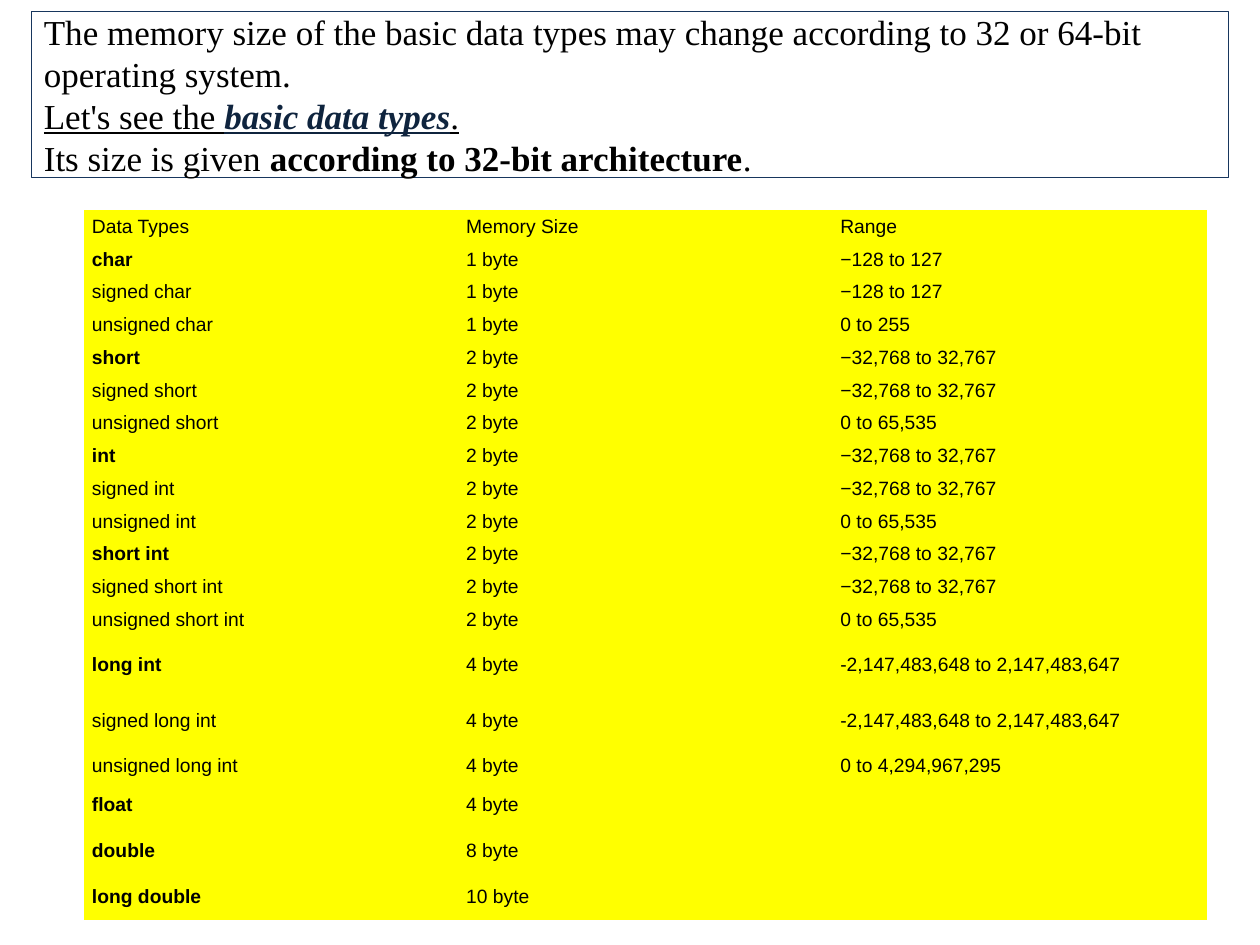
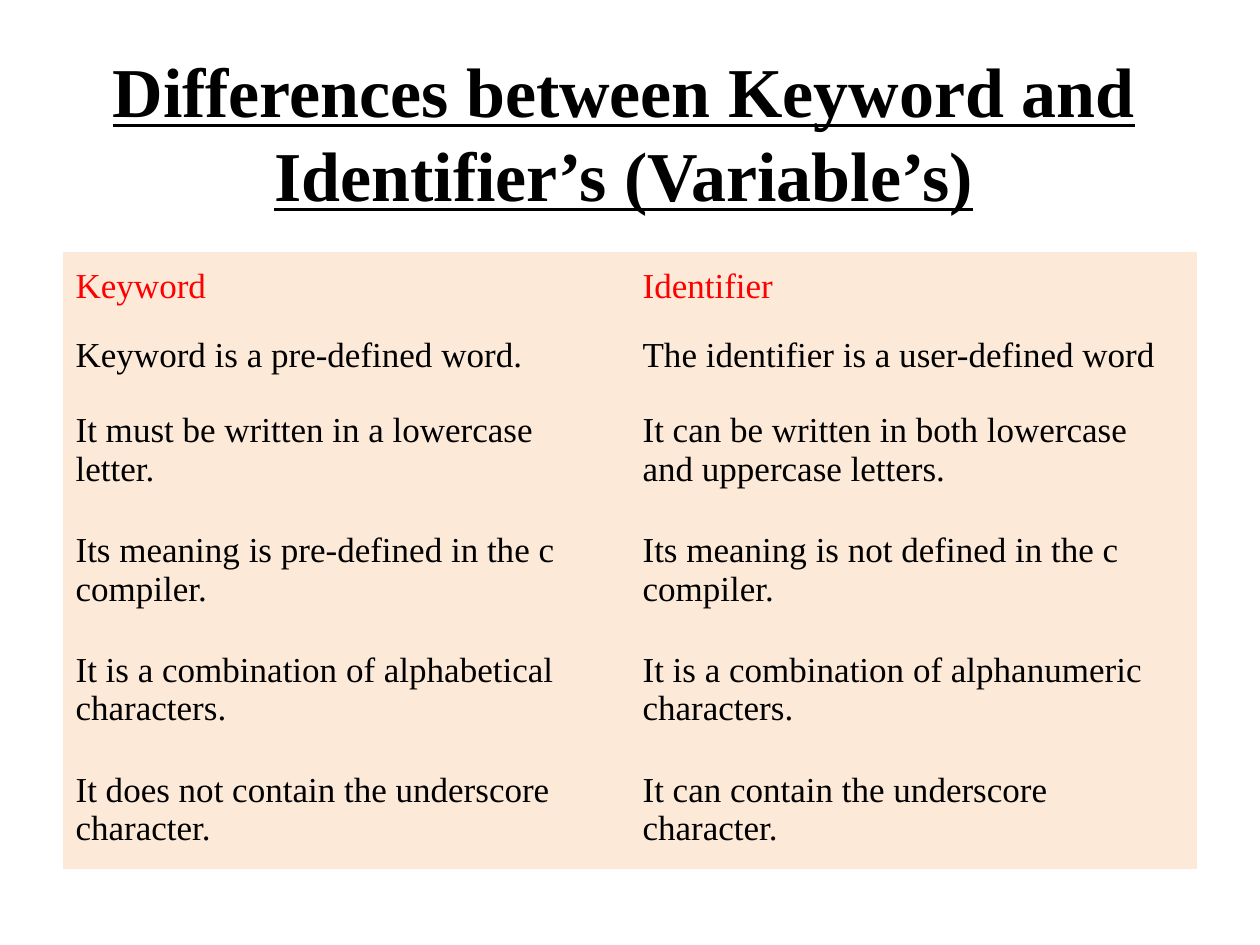
from pptx import Presentation
from pptx.dml.color import RGBColor
from pptx.enum.shapes import MSO_SHAPE as Shape
from pptx.enum.text import MSO_ANCHOR as Anchor, MSO_AUTO_SIZE as AutoSize, PP_ALIGN as Align
from pptx.util import Inches, Pt

SERIF, SANS = "Times New Roman", "Arial"
BLACK, RED, NAVY, FRAME = "000000", "FF0000", "0F243E", "17365D"
YELLOW, PEACH = "FFFF00", "FDE9D8"
PLAIN_TABLE = "{2D5ABB26-0587-4C30-8999-92F81FD0307C}"
WIDTH, HEIGHT = 10, 7.5
TITLE_ONLY, BLANK = 5, 6

INTRO = [
    [("The memory size of the basic data types may change according to "
      "32 or 64-bit operating system.", {})],
    [("Let's see the ", {"underline": True}),
     ("basic data types", {"underline": True, "bold": True, "italic": True, "color": NAVY}),
     (".", {"underline": True})],
    [("Its size is given ", {}),
     ("according to 32-bit architecture", {"bold": True}),
     (".", {})],
]

SIGNED_16, UNSIGNED_16 = "−32,768 to 32,767", "0 to 65,535"
SIGNED_32 = "-2,147,483,648 to 2,147,483,647"
FAMILIES = [
    ("char", "1 byte", "−128 to 127", "0 to 255"),
    ("short", "2 byte", SIGNED_16, UNSIGNED_16),
    ("int", "2 byte", SIGNED_16, UNSIGNED_16),
    ("short int", "2 byte", SIGNED_16, UNSIGNED_16),
    ("long int", "4 byte", SIGNED_32, "0 to 4,294,967,295"),
]
REAL_TYPES = [("float", "4 byte", ""), ("double", "8 byte", ""), ("long double", "10 byte", "")]

DIFFERENCES = [
    ("Keyword", "Identifier"),
    ("Keyword is a pre-defined word.", "The identifier is a user-defined word"),
    ("It must be written in a lowercase letter.",
     "It can be written in both lowercase and uppercase letters."),
    ("Its meaning is pre-defined in the c compiler.",
     "Its meaning is not defined in the c compiler."),
    ("It is a combination of alphabetical characters.",
     "It is a combination of alphanumeric characters."),
    ("It does not contain the underscore character.",
     "It can contain the underscore character."),
]


def rgb(value):
    return RGBColor.from_string(value)


def share(left, top, width, height):
    return (Inches(left * WIDTH), Inches(top * HEIGHT),
            Inches(width * WIDTH), Inches(height * HEIGHT))


def add_run(paragraph, text, font, size, color=BLACK, **styles):
    run = paragraph.add_run()
    run.text = text
    run.font.name, run.font.size = font, Pt(size)
    run.font.color.rgb = rgb(color)
    for style, value in styles.items():
        setattr(run.font, style, value)


def add_grid(slide, box, entries, row_heights, fill, font, size, margins, style_of, leading=None):
    grid = slide.shapes.add_table(len(entries), len(entries[0]), *box).table
    grid._tbl.tblPr[0].text = PLAIN_TABLE
    grid.first_row = grid.horz_banding = False
    side, edge = map(Inches, margins)
    for r, (entry, height) in enumerate(zip(entries, row_heights)):
        grid.rows[r].height = Inches(height)
        for c, text in enumerate(entry):
            cell = grid.cell(r, c)
            cell.fill.solid()
            cell.fill.fore_color.rgb = rgb(fill)
            cell.vertical_anchor = Anchor.MIDDLE
            cell.margin_left = cell.margin_right = side
            cell.margin_top = cell.margin_bottom = edge
            paragraph = cell.text_frame.paragraphs[0]
            paragraph.line_spacing = leading
            if text:
                add_run(paragraph, text, font, size, **style_of(r, c, text))


def add_intro(slide, box):
    intro = slide.shapes.add_shape(Shape.RECTANGLE, *box)
    intro.shadow.inherit = False
    intro.fill.background()
    intro.line.color.rgb = rgb(FRAME)
    intro.line.width = Pt(0.75)
    frame = intro.text_frame
    frame.word_wrap = True
    frame.vertical_anchor = Anchor.MIDDLE
    for i, parts in enumerate(INTRO):
        paragraph = frame.add_paragraph() if i else frame.paragraphs[0]
        paragraph.alignment = Align.LEFT
        paragraph.line_spacing = Pt(24)
        for text, styles in parts:
            add_run(paragraph, text, SERIF, 20, **styles)


def add_title(slide, box, text):
    title = slide.shapes.title
    title.left, title.top, title.width, title.height = box
    frame = title.text_frame
    frame.word_wrap = True
    frame.auto_size = AutoSize.NONE
    frame.vertical_anchor = Anchor.TOP
    paragraph = frame.paragraphs[0]
    paragraph.alignment = Align.CENTER
    paragraph.line_spacing = Pt(48)
    add_run(paragraph, text, SERIF, 40, bold=True, underline=True)


def data_type_rows():
    rows = [("Data Types", "Memory Size", "Range")]
    for name, size, signed, unsigned in FAMILIES:
        rows += [(name, size, signed), (f"signed {name}", size, signed),
                 (f"unsigned {name}", size, unsigned)]
    return rows + REAL_TYPES


def build_data_types(deck):
    slide = deck.slides.add_slide(deck.slide_layouts[BLANK])
    basic_names = {entry[0] for entry in FAMILIES + REAL_TYPES}
    heights = [0.26] * 13 + [0.45] * 2 + [0.26] + [0.34] * 3
    add_grid(slide, share(0.067, 0.2227, 0.891, 0.74), data_type_rows(), heights,
             YELLOW, SANS, 11, (0.06, 0.03),
             lambda r, c, text: {"bold": text in basic_names})
    add_intro(slide, share(0.025, 0.012, 0.95, 0.176))


def build_differences(deck):
    slide = deck.slides.add_slide(deck.slide_layouts[TITLE_ONLY])
    add_grid(slide, share(0.05, 0.2667, 0.9, 0.6533), DIFFERENCES, [0.55] * 2 + [0.95] * 4,
             PEACH, SERIF, 20, (0.1, 0.05),
             lambda r, c, text: {"color": BLACK if r else RED}, Pt(22))
    add_title(slide, share(0.016, 0.044, 0.958, 0.076),
              "Differences between Keyword and Identifier’s (Variable’s)")


def main():
    deck = Presentation()
    deck.slide_width, deck.slide_height = Inches(WIDTH), Inches(HEIGHT)
    build_data_types(deck)
    build_differences(deck)
    deck.save("out.pptx")


if __name__ == "__main__":
    main()
